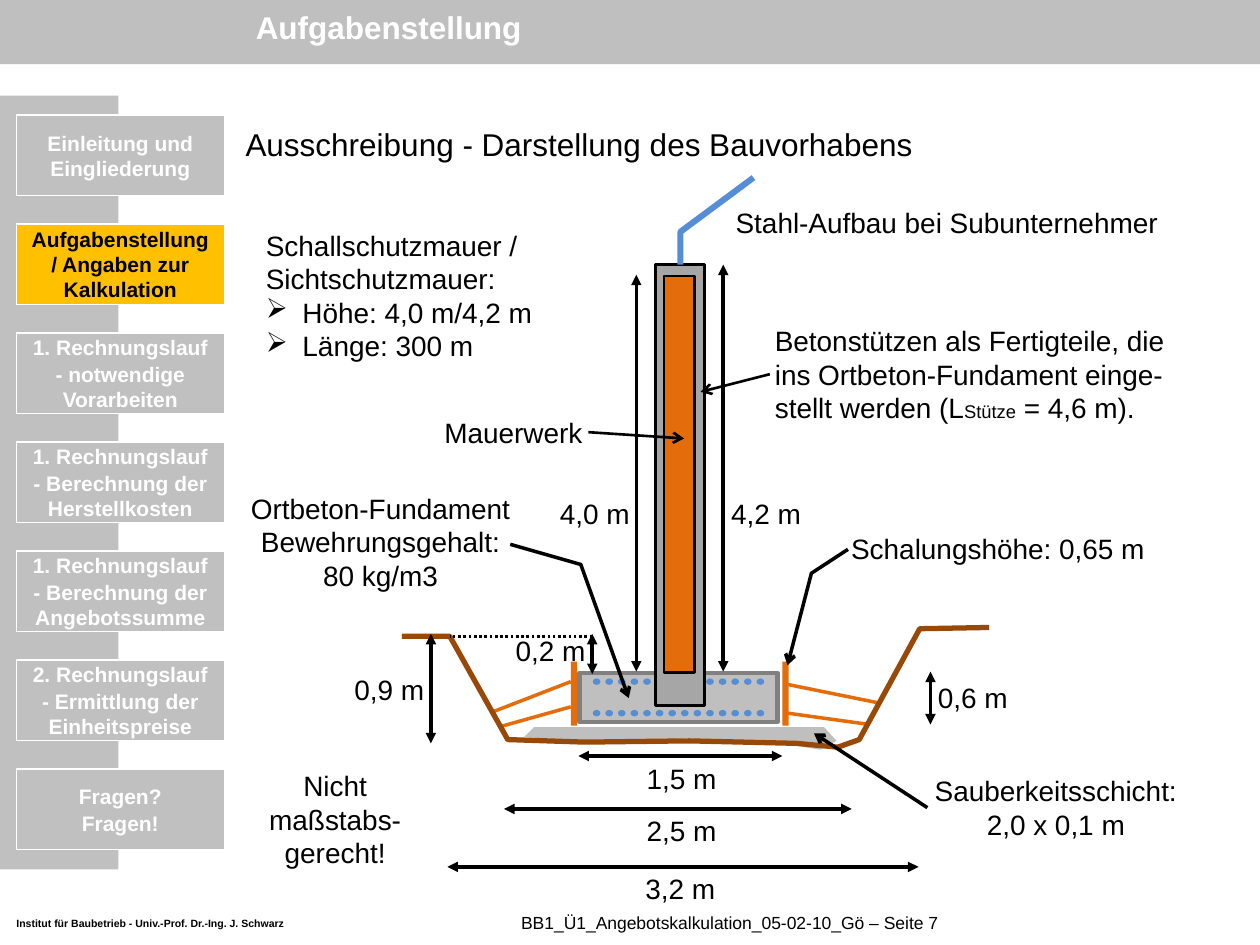
"""Builds the slide that describes the noise barrier project and its foundation."""
from dataclasses import dataclass

from lxml.etree import SubElement
from pptx import Presentation
from pptx.dml.color import RGBColor
from pptx.enum.dml import MSO_LINE
from pptx.enum.shapes import MSO_CONNECTOR, MSO_SHAPE
from pptx.enum.text import MSO_ANCHOR, MSO_AUTO_SIZE, PP_ALIGN
from pptx.oxml.ns import qn
from pptx.util import Inches, Pt

LEFT, CENTER = PP_ALIGN.LEFT, PP_ALIGN.CENTER
TOP, MIDDLE = MSO_ANCHOR.TOP, MSO_ANCHOR.MIDDLE
COLUMNS, ROWS = 100, 75


@dataclass(frozen=True)
class Theme:
    """Colours, type sizes and the font of the deck."""
    font: str = "Arial"
    black: str = "000000"
    white: str = "FFFFFF"
    banner: str = "BFBFBF"
    menu: str = "C0C0C0"
    active: str = "FFC000"
    concrete: str = "A6A6A6"
    edge: str = "808080"
    steel: str = "558ED5"
    brick: str = "E46C0A"
    soil: str = "984807"
    heading: float = 18
    body: float = 16
    item: float = 12
    index: float = 10.5
    footer: float = 10
    imprint: float = 6


THEME = Theme()


def write(frame, text, size=THEME.body, color=THEME.black, bold=False, align=CENTER,
          anchor=TOP, pad=(0.4, 0.4), before=0, spacing=None, bullets_from=None, wrap=True):
    """Fill a text frame; lines are split at newlines, index text is set off by underscores."""
    frame.word_wrap = wrap
    frame.vertical_anchor = anchor
    frame.margin_left = frame.margin_right = Inches(pad[0] / 10)
    frame.margin_top = frame.margin_bottom = Inches(pad[1] / 10)
    for number, line in enumerate(text.split("\n")):
        paragraph = frame.add_paragraph() if number else frame.paragraphs[0]
        if bullets_from is not None and number >= bullets_from:
            properties = paragraph._p.get_or_add_pPr()
            properties.set("marL", str(Inches(0.29)))
            properties.set("indent", str(-Inches(0.29)))
            SubElement(properties, qn("a:buChar")).set("char", "➢")
        paragraph.alignment = align
        if number and before:
            paragraph.space_before = Pt(before)
        if spacing:
            paragraph.line_spacing = spacing
        parts = line.split("|")
        for position, part in enumerate(parts):
            run = paragraph.add_run()
            run.text = part
            run.font.name = THEME.font
            run.font.size = Pt(THEME.index if position % 2 else size)
            run.font.bold = bold
            run.font.color.rgb = RGBColor.from_string(color)


class Sheet:
    """Draws styled elements on one slide, placed by grid columns and rows."""

    def __init__(self, deck, theme):
        """Add a blank slide and set the size of a grid cell."""
        self.theme = theme
        self.slide = deck.slides.add_slide(deck.slide_layouts[6])
        self.shapes = self.slide.shapes
        self.column = deck.slide_width / COLUMNS
        self.row = deck.slide_height / ROWS

    def place(self, *lengths):
        """Turn alternating columns and rows into slide lengths."""
        return [round(value * (self.row if i % 2 else self.column))
                for i, value in enumerate(lengths)]

    def stroke(self, shape, color, width, head=None, tail=None, dash=None):
        """Style the line of a shape, with optional arrowheads and dashes."""
        shape.line.color.rgb = RGBColor.from_string(color)
        shape.line.width = Pt(width)
        if dash:
            shape.line.dash_style = dash
        outline = shape._element.spPr.get_or_add_ln()
        for end, kind in (("a:headEnd", head), ("a:tailEnd", tail)):
            if kind:
                SubElement(outline, qn(end)).set("type", kind)

    def dress(self, shape, fill=None, line=None, width=0.75, **ends):
        """Set fill and line of a shape and drop its shadow."""
        shape.shadow.inherit = False
        if fill:
            shape.fill.solid()
            shape.fill.fore_color.rgb = RGBColor.from_string(fill)
        else:
            shape.fill.background()
        if line:
            self.stroke(shape, line, width, **ends)
        else:
            shape.line.fill.background()
        return shape

    def block(self, area, fill, line=None, width=0.75, kind=MSO_SHAPE.RECTANGLE):
        """Draw a preset shape."""
        return self.dress(self.shapes.add_shape(kind, *self.place(*area)), fill, line, width)

    def label(self, area, text, **style):
        """Draw a text box."""
        frame = self.shapes.add_textbox(*self.place(*area)).text_frame
        write(frame, text, **style)
        frame.auto_size = MSO_AUTO_SIZE.NONE

    def line(self, ends, color=THEME.black, width=2, **style):
        """Draw a straight line."""
        connector = self.shapes.add_connector(MSO_CONNECTOR.STRAIGHT, *self.place(*ends))
        self.stroke(connector, color, width, **style)
        SubElement(connector._element.spPr, qn("a:effectLst"))

    def measure(self, ends):
        """Draw a dimension line with arrows at both ends."""
        self.line(ends, head="triangle", tail="triangle")

    def outline(self, points, closed=False, **style):
        """Draw a polygon or an open polyline."""
        start, *rest = [self.place(*point) for point in points]
        builder = self.shapes.build_freeform(*start)
        builder.add_line_segments(rest, close=closed)
        self.dress(builder.convert_to_shape(), **style)


MENU = (
    "Einleitung und Eingliederung",
    "Aufgabenstellung / Angaben zur Kalkulation",
    "1. Rechnungslauf\n- notwendige Vorarbeiten",
    "1. Rechnungslauf\n- Berechnung der Herstellkosten",
    "1. Rechnungslauf\n- Berechnung der Angebotssumme",
    "2. Rechnungslauf\n- Ermittlung der Einheitspreise",
    "Fragen?\nFragen!",
)
ACTIVE_ITEM = 1
DIMENSIONS = (
    ("4,2 m", 57.6, 39, (57.4, 21, 57.4, 53.3)),
    ("4,0 m", 44, 39, (50.5, 21.8, 50.5, 53.3)),
    ("1,5 m", 50.9, 60, (45.9, 60, 62.1, 60)),
    ("0,6 m", 74, 53.6, (73.85, 53.3, 73.85, 57.5)),
    ("0,9 m", 27.7, 53, (34.2, 50.3, 34.2, 59)),
    ("0,2 m", 40.5, 49.9, (47, 50.3, 47, 53.5)),
    ("2,5 m", 50.9, 64.2, (40, 64.2, 67.6, 64.2)),
    ("3,2 m", 50.8, 68.8, (35.5, 68.8, 72.9, 68.8)),
)
NOTES = (
    ((20.9, 60.6, 11.4, 8.9), "Nicht\nmaßstabs-\ngerecht!"),
    ((73.6, 61, 20.4, 6.2), "Sauberkeitsschicht:\n2,0 x 0,1 m"),
    ((57.8, 15.9, 34.7, 3.5), "Stahl-Aufbau bei Subunternehmer"),
    ((19.4, 38.6, 21.6, 8.9), "Ortbeton-Fundament\nBewehrungsgehalt:\n80 kg/m3"),
    ((67, 41.8, 24.4, 3.5), "Schalungshöhe: 0,65 m"),
    ((34.8, 32.6, 11.9, 3.5), "Mauerwerk"),
)
PROPS = ((39.1, 56.5, 45.3, 54.1), (45.3, 56.1, 39.6, 57.7),
         (62.4, 54.3, 69.8, 55.8), (62.5, 56.6, 69, 57.5))
BEDDING = ((42.4, 57.7), (65.4, 57.7), (66.4, 58.8), (65.1, 59.5), (62.1, 59),
           (54.5, 58.6), (48, 58.9), (41.6, 58.5))
PIT = ((31.9, 50.5), (35.7, 50.5), (40.3, 58.7), (46.4, 58.9), (54.7, 58.8),
       (63.2, 59), (66.5, 59.3), (68.2, 58.7), (73, 49.9), (78.5, 49.8))


def draw_frame(sheet):
    """Draw the banner, the footer and the side menu."""
    theme = sheet.theme
    sheet.label((1.3, 72.8, 21.5, 1), "Institut für Baubetrieb - Univ.-Prof. Dr.-Ing. J. Schwarz",
                size=theme.imprint, bold=True, align=LEFT, anchor=MIDDLE, pad=(0, 0), wrap=False)
    sheet.block((0, 0, 100, 5.1), theme.banner)
    sheet.block((0, 7.6, 9.4, 61.4), theme.menu)
    sheet.label((27.6, 71.7, 60.6, 3.1), "BB1_Ü1_Angebotskalkulation_05-02-10_Gö – Seite 7",
                size=theme.footer, anchor=MIDDLE, pad=(1, 0))
    for number, item in enumerate(MENU):
        fill, ink = ((theme.active, theme.black) if number == ACTIVE_ITEM
                     else (theme.menu, theme.white))
        button = sheet.block((1.3, 9.13 + 8.65 * number, 16.5, 6.4), fill, theme.white)
        write(button.text_frame, item, size=theme.item, color=ink, bold=True,
              anchor=MIDDLE, pad=(1, 0.5), before=1)
    sheet.label((20.1, 0.4, 79.5, 3.4), "Aufgabenstellung", size=theme.heading,
                color=theme.white, bold=True, align=LEFT, anchor=MIDDLE, pad=(0.2, 0.2))
    sheet.label((18.5, 7.9, 76.8, 5.6), "Ausschreibung - Darstellung des Bauvorhabens",
                size=theme.heading, align=LEFT, pad=(1, 0.5), spacing=1.5)


def draw_section(sheet):
    """Draw the cross section of wall, foundation and pit."""
    theme = sheet.theme
    sheet.block((46, 53.4, 15.7, 3.9), theme.banner, theme.edge, 2.5)
    for top, hidden in ((56.4, ()), (53.9, (6, 7, 8))):
        for bar in range(14):
            if bar not in hidden:
                sheet.block((47.1 + bar, top, 0.5, 0.4), theme.steel, theme.steel,
                            kind=MSO_SHAPE.OVAL)
    sheet.block((52, 21, 3.9, 35), theme.concrete, theme.black, 1.5)
    sheet.outline(BEDDING, closed=True, fill=theme.banner)
    for left in (45.3, 62.1):
        sheet.block((left, 52.5, 0.5, 5.1), theme.brick)
    for prop in PROPS:
        sheet.line(prop, theme.brick)
    sheet.block((52.7, 21.9, 2.4, 31.5), theme.brick, theme.black, 1.5)
    sheet.outline(PIT, line=theme.soil, width=3)
    sheet.outline(((54, 21), (54, 18.4), (59.8, 14.1)), line=theme.steel, width=3.5)


def draw_notes(sheet):
    """Draw the dimensions, the notes and their pointers."""
    theme = sheet.theme
    for text, left, top, ends in DIMENSIONS:
        sheet.measure(ends)
        sheet.label((left, top, 6.4, 3.5), text, wrap=False)
    sheet.line((47, 50.5, 35.7, 50.5), width=1.5, dash=MSO_LINE.ROUND_DOT)
    for area, text in NOTES:
        sheet.label(area, text, wrap=False)
    sheet.label((20.7, 17.7, 22.2, 14.3), "Schallschutzmauer /\nSichtschutzmauer:\n"
                "Höhe: 4,0 m/4,2 m\nLänge: 300 m", align=LEFT, bullets_from=2)
    sheet.label((61.1, 25.3, 32.7, 8.9), "Betonstützen als Fertigteile, die\n"
                "ins Ortbeton-Fundament einge-\nstellt werden (L|Stütze| = 4,6 m).",
                align=LEFT, wrap=False)
    sheet.line((73.6, 64.1, 64.6, 58.2), tail="arrow")
    for pointer in ((46.7, 34.3, 54.3, 34.8), (61.1, 29.7, 55.6, 31.1)):
        sheet.line(pointer, width=1.5, tail="arrow")
    for pointer in (((40.5, 43.2), (46.1, 44.8), (49.9, 55.4)),
                    ((67.3, 43.6), (64.4, 45.5), (62.5, 52.8))):
        sheet.outline(pointer, line=theme.black, width=2, tail="arrow")


def main():
    """Build and save the deck."""
    deck = Presentation()
    deck.slide_width, deck.slide_height = Inches(10), Inches(7.5)
    sheet = Sheet(deck, THEME)
    draw_frame(sheet)
    draw_section(sheet)
    draw_notes(sheet)
    deck.save("out.pptx")


if __name__ == "__main__":
    main()
